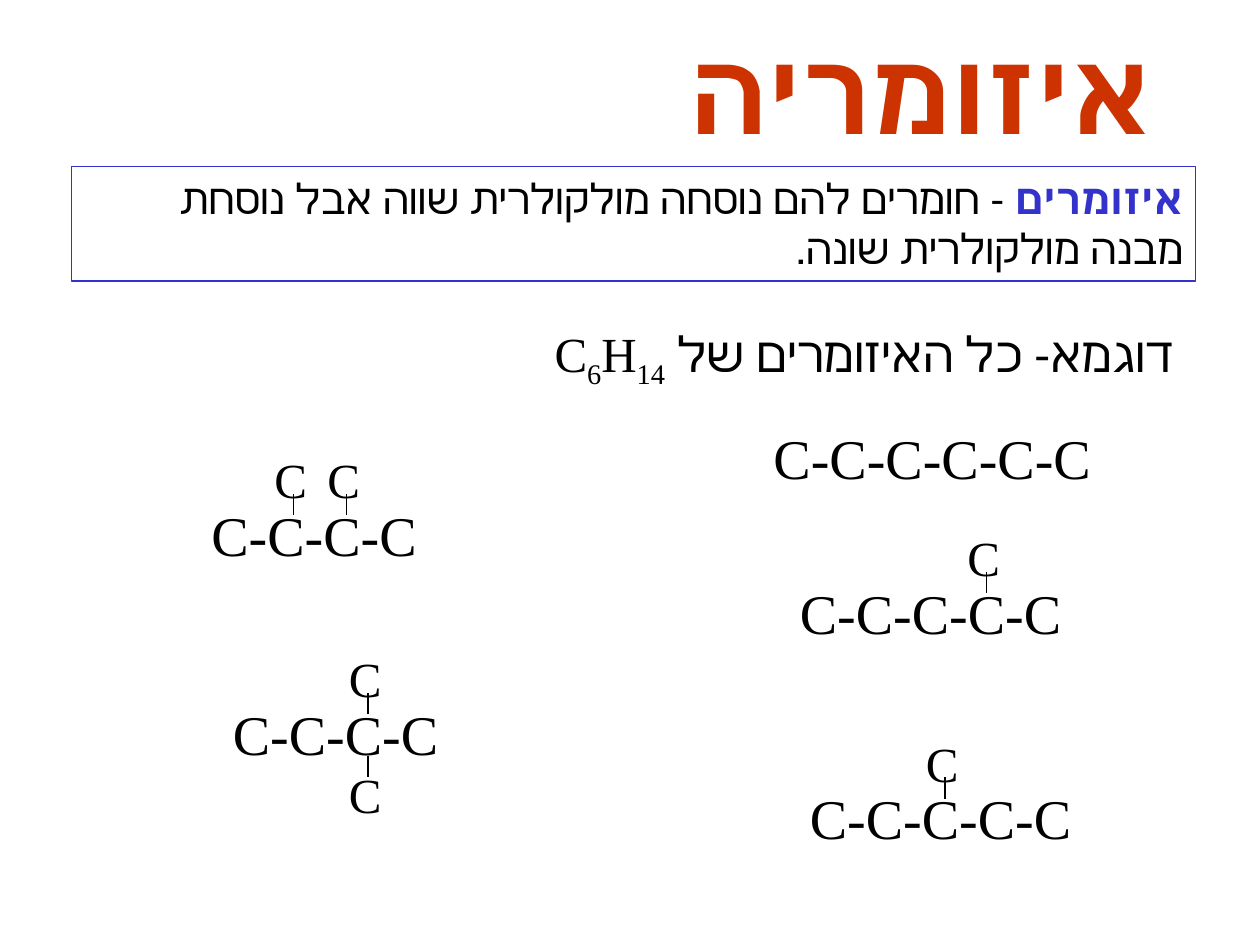
"""Build a Hebrew slide on the isomers of C6H14."""
from lxml.etree import SubElement
from pptx import Presentation
from pptx.dml.color import RGBColor
from pptx.enum.shapes import MSO_CONNECTOR, MSO_SHAPE
from pptx.enum.text import MSO_ANCHOR, PP_ALIGN
from pptx.oxml.ns import qn
from pptx.util import Inches, Pt

RED = RGBColor(0xCC, 0x33, 0x00)
BLUE = RGBColor(0x33, 0x33, 0xCC)
BLACK = RGBColor(0, 0, 0)
FONT = "Times New Roman"

TITLE = "איזומריה"
TERM = "איזומרים"
MEANING = " - חומרים להם נוסחה מולקולרית שווה אבל נוסחת מבנה מולקולרית שונה."
FORMULA = [("דוגמא- כל האיזומרים של C", 0), ("6", -25000), ("H", 0), ("14", -25000)]
HEXANE = (6.04, 3.31, "C-C-C-C-C-C")
BRANCHED = [
    (6.25, 4.54, "C-C-C-C-C", [(1.58, "up")]),
    (6.33, 6.17, "C-C-C-C-C", [(1.17, "up")]),
    (1.58, 3.92, "C-C-C-C", [(1.17, "up"), (0.75, "up")]),
    (1.75, 5.5, "C-C-C-C", [(1.17, "up"), (1.17, "down")]),
]
SIDES = {"up": (0, -0.4), "down": (0.5, 0.52)}
BOND = 0.17


def style(run, size, color=BLACK, bold=False):
    font = run.font
    font.name, font.size, font.bold = FONT, Pt(size), bold
    font.color.rgb = color


def space(par):
    gap = SubElement(par._p.get_or_add_pPr(), qn("a:spcBef"))
    SubElement(gap, qn("a:spcPct")).set("val", "50000")


def set_rtl(par):
    par.alignment = PP_ALIGN.RIGHT
    par._p.get_or_add_pPr().set("rtl", "1")


def add_text(shapes, left, top, width, height, text, size):
    box = shapes.add_textbox(*map(Inches, (left, top, width, height)))
    box.text_frame.word_wrap = True
    par = box.text_frame.paragraphs[0]
    par.text = text
    space(par)
    for run in par.runs:
        style(run, size)
    return par


def add_bond(shapes, x, top):
    bond = shapes.add_connector(
        MSO_CONNECTOR.STRAIGHT, *map(Inches, (x, top, x, top + BOND)))
    bond.line.color.rgb = BLACK
    bond.line.width = Pt(0.75)
    SubElement(bond._element.spPr, qn("a:effectLst"))


def add_isomer(slide, left, top, chain, sides):
    shapes = slide.shapes.add_group_shape().shapes
    add_text(shapes, left, top, 2.5, 0.63, chain, 32)
    for shift, side in sides:
        x = left + shift
        start, drop = SIDES[side]
        add_bond(shapes, x, top + start)
        add_text(shapes, x - 0.25, top + drop, 0.5, 0.57, "C", 28)


def add_title(slide):
    title = slide.shapes.title
    title.left, title.top, title.width, title.height = map(
        Inches, (3.5, 0.08, 5.75, 1.25))
    frame = title.text_frame
    frame.text = TITLE
    frame.vertical_anchor = MSO_ANCHOR.MIDDLE
    set_rtl(frame.paragraphs[0])
    style(frame.paragraphs[0].runs[0], 66, RED, True)


def add_meaning(slide):
    box = slide.shapes.add_shape(
        MSO_SHAPE.RECTANGLE, *map(Inches, (0.57, 1.32, 8.92, 0.91)))
    box.shadow.inherit = False
    box.fill.background()
    box.line.color.rgb = BLUE
    box.line.width = Pt(0.75)
    frame = box.text_frame
    frame.word_wrap = True
    frame.vertical_anchor = MSO_ANCHOR.TOP
    par = frame.paragraphs[0]
    set_rtl(par)
    space(par)
    for text, color, bold in ((TERM, BLUE, True), (MEANING, BLACK, False)):
        run = par.add_run()
        run.text = text
        style(run, 24, color, bold)


def add_formula(slide):
    par = add_text(slide.shapes, 1.3, 2.52, 8.12, 0.57, "", 28)
    set_rtl(par)
    for text, base in FORMULA:
        run = par.add_run()
        run.text = text
        style(run, 28)
        if base:
            run._r.get_or_add_rPr().set("baseline", str(base))


def main():
    deck = Presentation()
    deck.slide_width, deck.slide_height = Inches(10), Inches(7.5)
    slide = deck.slides.add_slide(deck.slide_layouts[5])
    add_title(slide)
    add_formula(slide)
    left, top, chain = HEXANE
    add_text(slide.shapes, left, top, 2.75, 0.63, chain, 32)
    for isomer in BRANCHED:
        add_isomer(slide, *isomer)
    add_meaning(slide)
    deck.save("out.pptx")


if __name__ == "__main__":
    main()
